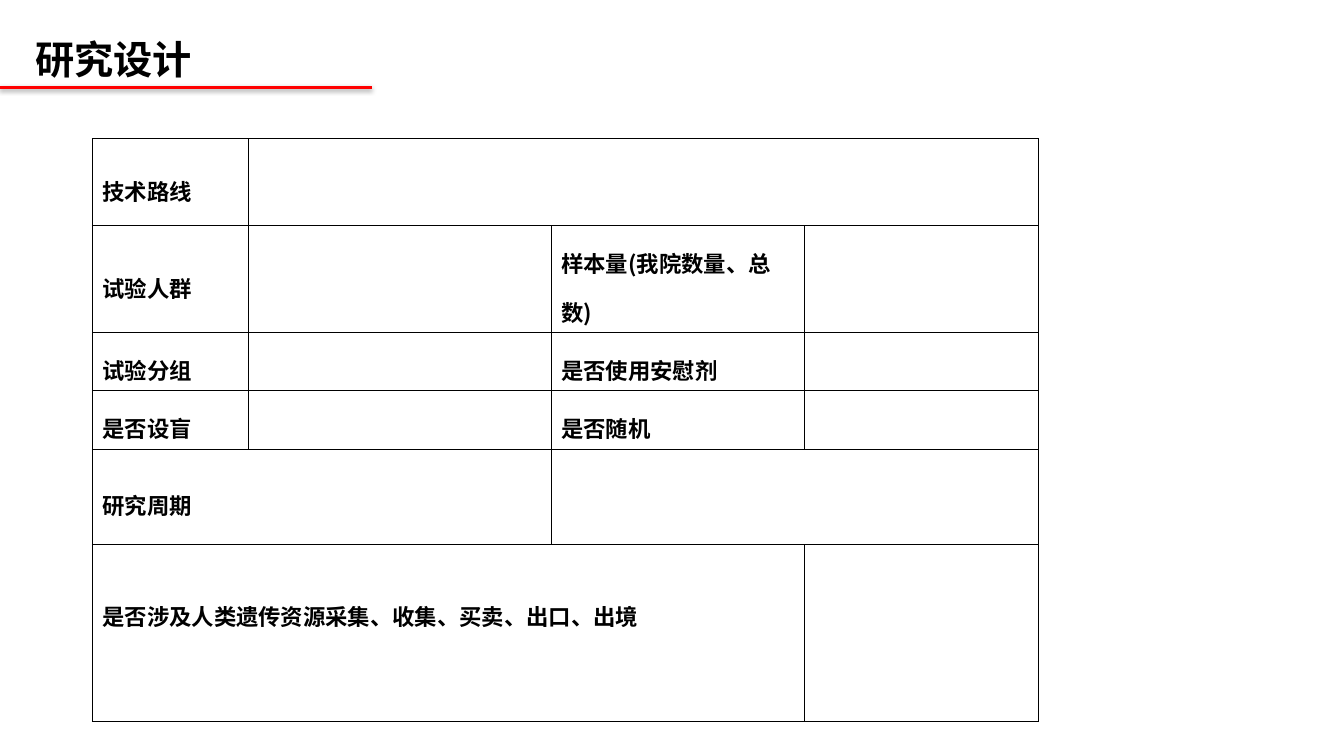
from dataclasses import dataclass

from lxml import etree
from pptx import Presentation
from pptx.dml.color import RGBColor
from pptx.enum.shapes import MSO_CONNECTOR
from pptx.enum.text import MSO_ANCHOR
from pptx.oxml.ns import qn
from pptx.util import Pt

STRAIGHT = MSO_CONNECTOR.STRAIGHT
MIDDLE = MSO_ANCHOR.MIDDLE
BOTTOM = MSO_ANCHOR.BOTTOM
PX = 9525


@dataclass(frozen=True)
class Theme:
    ink: str = "000000"
    accent: str = "FF0000"
    title_font: str = "Times New Roman"
    body_font: str = "Noto Sans CJK SC"
    title_size: int = 28
    body_size: int = 16
    rule_width: int = 2
    border_width: int = 1


THEME = Theme()
COLUMNS = [149, 288, 241, 223]
ROWS = [83, 102, 55, 56, 91, 168]
LABELS = {
    (0, 0): "技术路线",
    (1, 0): "试验人群",
    (1, 2): "样本量(我院数量、总数)",
    (2, 0): "试验分组",
    (2, 2): "是否使用安慰剂",
    (3, 0): "是否设盲",
    (3, 2): "是否随机",
    (4, 0): "研究周期",
    (5, 0): "是否涉及人类遗传资源采集、收集、买卖、出口、出境",
}
MERGES = [(0, 1, 3), (4, 0, 1), (4, 2, 3), (5, 0, 2)]
LAST_LABEL_BOTTOM = 53


def px(*lengths):
    return [length * PX for length in lengths]


def add_element(parent, tag, **attributes):
    return etree.SubElement(parent, qn(tag), attributes)


def write(text_frame, text, font_name, size, line_spacing):
    text_frame.text = text
    paragraph = text_frame.paragraphs[0]
    paragraph.line_spacing = line_spacing
    run = paragraph.runs[0]
    run.font.name = font_name
    run.font.size = Pt(size)
    run.font.bold = True
    run.font.color.rgb = RGBColor.from_string(THEME.ink)
    add_element(run.font._element, "a:ea", typeface=THEME.body_font)


def add_heading(slide, left, top, width, height, rule_end):
    title = slide.shapes.add_textbox(*px(left, top, width, height))
    title.text_frame.word_wrap = True
    title.text_frame.vertical_anchor = BOTTOM
    write(title.text_frame, "研究设计", THEME.title_font, THEME.title_size, 0.9)

    rule_top = top + height - 1
    rule = slide.shapes.add_connector(STRAIGHT, *px(0, rule_top, rule_end, rule_top))
    rule.line.color.rgb = RGBColor.from_string(THEME.accent)
    rule.line.width = Pt(THEME.rule_width)
    effects = add_element(rule._element.spPr, "a:effectLst")
    shadow = add_element(effects, "a:outerShdw", blurRad="40000", dist="20000",
                         dir="5400000", rotWithShape="0")
    color = add_element(shadow, "a:srgbClr", val=THEME.ink)
    add_element(color, "a:alpha", val="38000")


def add_borders(cell):
    properties = cell._tc.get_or_add_tcPr()
    for side in "LRTB":
        line = add_element(properties, f"a:ln{side}", w=str(Pt(THEME.border_width)))
        fill = add_element(line, "a:solidFill")
        add_element(fill, "a:srgbClr", val=THEME.ink)


def add_design_table(slide, left, top):
    frame = slide.shapes.add_table(len(ROWS), len(COLUMNS),
                                   *px(left, top, sum(COLUMNS), sum(ROWS)))
    table = frame.table
    table.first_row = False
    table.horz_banding = False
    for column, width in zip(table.columns, px(*COLUMNS)):
        column.width = width
    for row, height in zip(table.rows, px(*ROWS)):
        row.height = height
    for cell in table.iter_cells():
        add_borders(cell)
        cell.fill.background()
        cell.vertical_anchor = MIDDLE
    for row, first, last in MERGES:
        table.cell(row, first).merge(table.cell(row, last))
    for (row, column), label in LABELS.items():
        write(table.cell(row, column).text_frame, label,
              THEME.body_font, THEME.body_size, 1.5)
    table.cell(len(ROWS) - 1, 0).margin_bottom = LAST_LABEL_BOTTOM * PX


def main():
    presentation = Presentation()
    presentation.slide_width, presentation.slide_height = px(1280, 720)
    slide = presentation.slides.add_slide(presentation.slide_layouts[6])
    add_heading(slide, 24, 32, 1140, 52, rule_end=354)
    add_design_table(slide, 88, 132)
    presentation.save("out.pptx")


if __name__ == "__main__":
    main()
